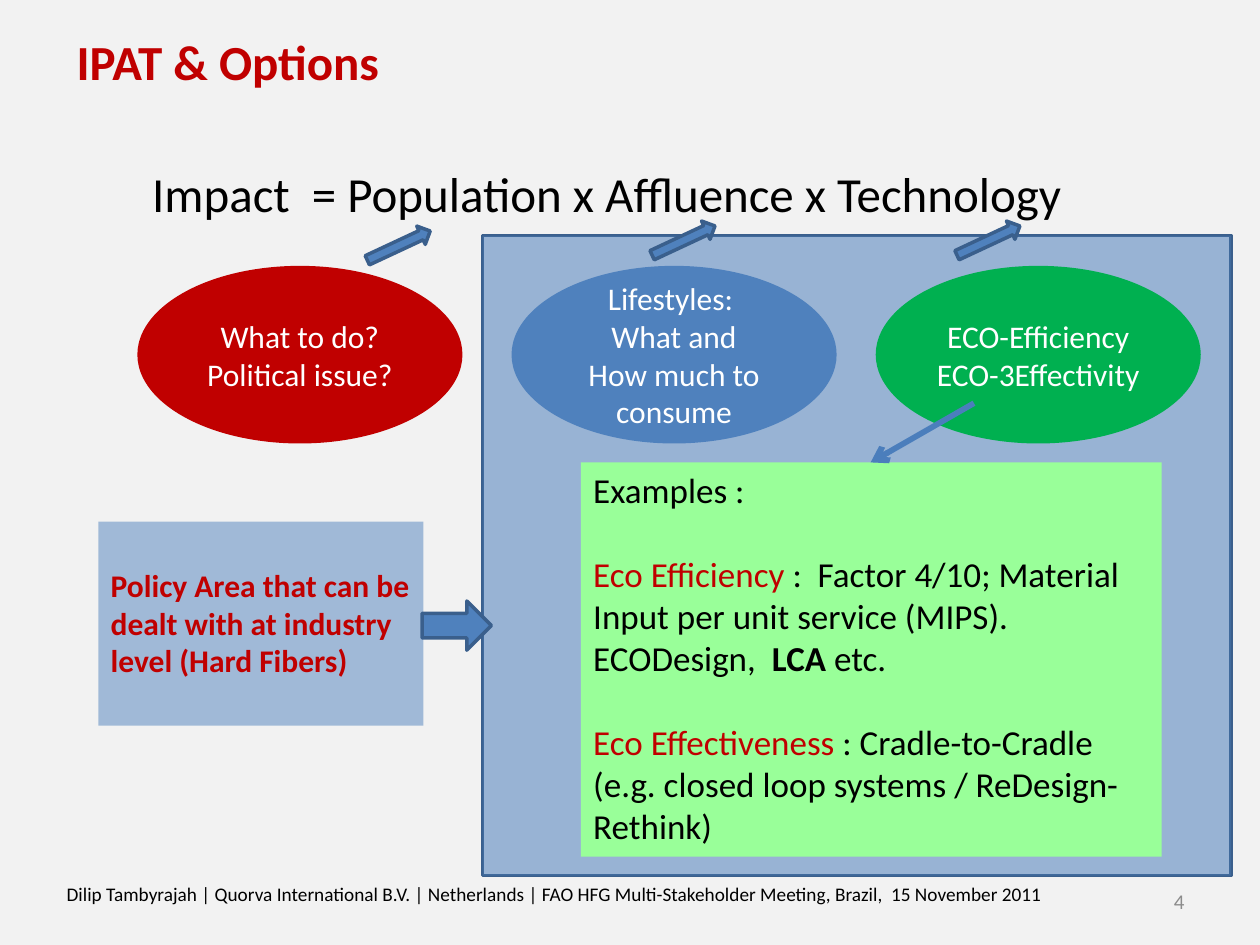
import lxml.etree
import pptx
import pptx.dml.color
import pptx.enum.shapes
import pptx.enum.text
import pptx.oxml.ns
import pptx.util
from pptx.util import Inches

RGBColor = pptx.dml.color.RGBColor
SHAPE = pptx.enum.shapes.MSO_SHAPE
ALIGN = pptx.enum.text.PP_ALIGN
ANCHOR = pptx.enum.text.MSO_ANCHOR
qn = pptx.oxml.ns.qn

BACKGROUND = RGBColor(0xF2, 0xF2, 0xF2)
BLACK = RGBColor(0x00, 0x00, 0x00)
WHITE = RGBColor(0xFF, 0xFF, 0xFF)
GRAY = RGBColor(0x8C, 0x8C, 0x8C)
RED = RGBColor(0xC0, 0x00, 0x00)
BLUE = RGBColor(0x4F, 0x81, 0xBD)
DARK_BLUE = RGBColor(0x3A, 0x5F, 0x8C)
LINE_BLUE = RGBColor(0x4B, 0x7E, 0xBC)
GREEN = RGBColor(0x00, 0xB0, 0x50)
LIGHT_GREEN = RGBColor(0x99, 0xFF, 0x99)

presentation = pptx.Presentation()
presentation.slide_width = Inches(10)
presentation.slide_height = Inches(7.5)
slide = presentation.slides.add_slide(presentation.slide_layouts[6])
slide.background.fill.solid()
slide.background.fill.fore_color.rgb = BACKGROUND


def write_text(shape, paragraphs, size, color=BLACK, bold=False, align=ALIGN.LEFT,
               anchor=ANCHOR.TOP, gap=0):
    """Write paragraphs, each a list of (text, overrides) runs, with gap points between them."""
    frame = shape.text_frame
    frame.word_wrap = True
    frame.vertical_anchor = anchor
    for index, runs in enumerate(paragraphs):
        paragraph = frame.paragraphs[0] if index == 0 else frame.add_paragraph()
        paragraph.alignment = align
        if index and gap:
            paragraph.space_before = pptx.util.Pt(gap)
        for text, overrides in runs:
            run = paragraph.add_run()
            run.text = text
            run.font.name = "Calibri"
            run.font.size = pptx.util.Pt(size)
            run.font.bold = overrides.get("bold", bold)
            run.font.color.rgb = overrides.get("color", color)


def add_filled_shape(kind, left, top, width, height, fill, line=None, opacity=100):
    shape = slide.shapes.add_shape(kind, Inches(left), Inches(top), Inches(width), Inches(height))
    shape.shadow.inherit = False
    shape.fill.solid()
    shape.fill.fore_color.rgb = fill
    if opacity < 100:
        color_element = shape.fill._xPr.find(qn("a:solidFill"))[0]
        lxml.etree.SubElement(color_element, qn("a:alpha")).set("val", str(opacity * 1000))
    if line is None:
        shape.line.fill.background()
    else:
        shape.line.color.rgb = line
        shape.line.width = pptx.util.Pt(2)
    return shape


# Title, equation, footer and page number
footer = "Dilip Tambyrajah | Quorva International B.V. | Netherlands | FAO HFG Multi-Stakeholder Meeting, Brazil,  15 November 2011"
for text, (left, top, width, height), text_format in [
    ("4", (8.62, 6.95, 0.88, 0.4),
     dict(size=12, color=GRAY, align=ALIGN.RIGHT, anchor=ANCHOR.MIDDLE)),
    (footer, (0.43, 6.95, 8.11, 0.4), dict(size=11)),
    ("IPAT & Options", (0.51, 0.2, 2.89, 0.95), dict(size=28, color=RED, bold=True)),
    ("Impact  = Population x Affluence x Technology", (0.7, 1.25, 8.23, 0.57),
     dict(size=28, align=ALIGN.CENTER)),
]:
    text_box = slide.shapes.add_textbox(Inches(left), Inches(top), Inches(width), Inches(height))
    write_text(text_box, [[(text, {})]], **text_format)

# Two translucent layers mark the industry policy area
for outline in (DARK_BLUE, None):
    add_filled_shape(SHAPE.RECTANGLE, 3.83, 1.87, 5.94, 5.08, BLUE, outline, opacity=33)

# One ellipse and one slanted arrow for each factor of the equation
for ellipse_left, arrow_left, arrow_top, fill, lines in [
    (1.09, 2.89, 1.87, RED, ["What to do?", "Political issue?"]),
    (4.06, 5.15, 1.83, BLUE, ["Lifestyles: ", "What and", "How much to", "consume"]),
    (6.95, 7.57, 1.83, GREEN, ["ECO-Efficiency", "ECO-3Effectivity"]),
]:
    ellipse = add_filled_shape(SHAPE.OVAL, ellipse_left, 2.11, 2.58, 1.41, fill)
    write_text(ellipse, [[(line, {})] for line in lines], size=18, color=WHITE,
               align=ALIGN.CENTER, anchor=ANCHOR.MIDDLE)
    factor_arrow = add_filled_shape(SHAPE.RIGHT_ARROW, arrow_left, arrow_top, 0.55, 0.16,
                                    BLUE, DARK_BLUE)
    factor_arrow.rotation = 335

# Examples of eco-efficiency and eco-effectiveness
examples = add_filled_shape(SHAPE.RECTANGLE, 4.61, 3.67, 4.61, 3.13, LIGHT_GREEN)
write_text(examples, [
    [("Examples :", {})],
    [("Eco Efficiency ", {"color": RED}),
     (":  Factor 4/10; Material Input per unit service (MIPS). ECODesign,  ", {}),
     ("LCA ", {"bold": True}),
     ("etc.", {})],
    [("Eco Effectiveness ", {"color": RED}),
     (": Cradle-to-Cradle (e.g. closed loop systems / ReDesign-Rethink)", {})],
], size=20, gap=24)

connector = slide.shapes.add_connector(pptx.enum.shapes.MSO_CONNECTOR.STRAIGHT,
                                       Inches(7.73), Inches(3.2), Inches(6.91), Inches(3.67))
connector.line.color.rgb = LINE_BLUE
connector.line.width = pptx.util.Pt(3.25)
lxml.etree.SubElement(connector.line._get_or_add_ln(), qn("a:tailEnd")).set("type", "arrow")
lxml.etree.SubElement(connector._element.spPr, qn("a:effectLst"))

# Policy note and its arrow into the policy area
policy = add_filled_shape(SHAPE.RECTANGLE, 0.78, 4.14, 2.58, 1.62, BLUE, opacity=50)
policy.text_frame.margin_top = Inches(0.35)
write_text(policy, [[("Policy Area that can be dealt with at industry level (Hard Fibers)", {})]],
           size=18, color=RED, bold=True)
add_filled_shape(SHAPE.RIGHT_ARROW, 3.35, 4.77, 0.55, 0.39, BLUE, DARK_BLUE)

presentation.save("out.pptx")
